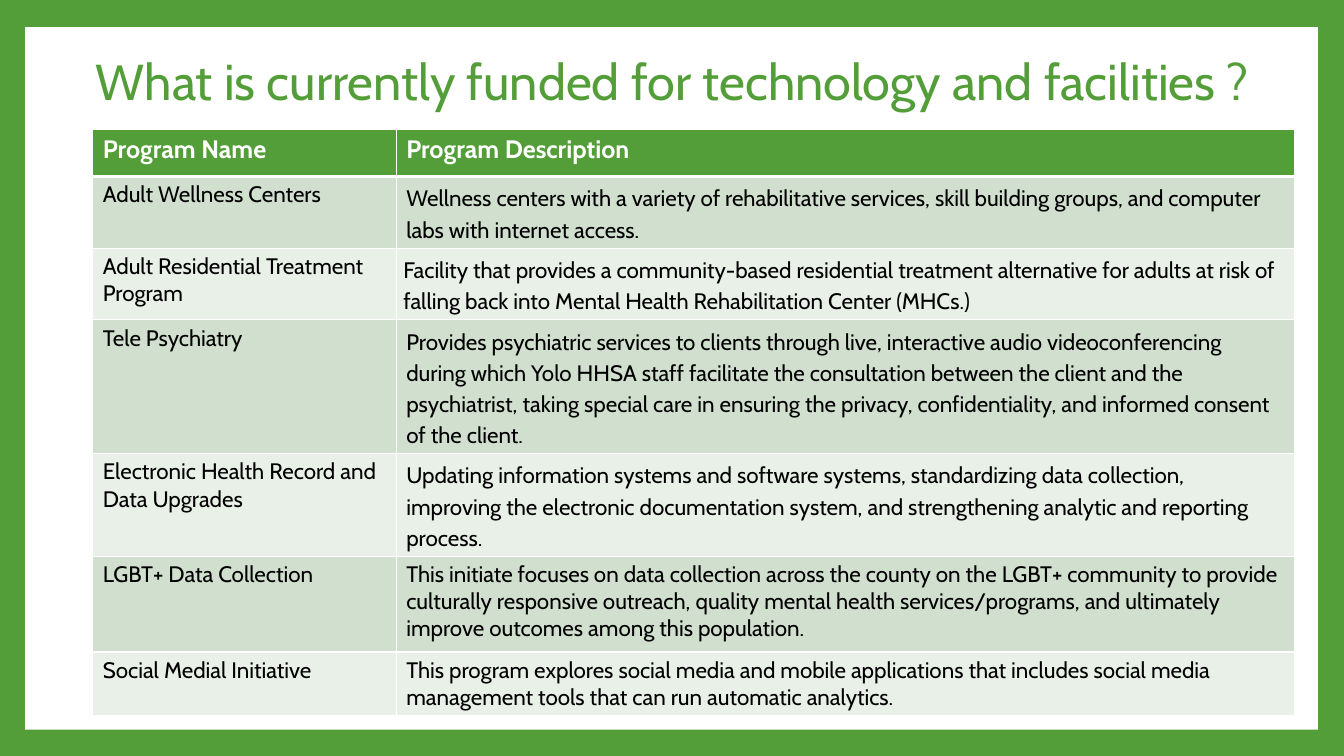
import pptx
import pptx.util
import pptx.dml.color
import pptx.enum.shapes
import pptx.enum.text
import pptx.oxml
import pptx.oxml.ns

PX = 9144
FONT = "Cabin"
COLORS = {
    "green": "549E39",
    "white": "FFFFFF",
    "black": "000000",
    "dark_band": "D1DFCE",
    "light_band": "E9F0E8",
}
COLUMN_WIDTHS = [301, 891]
ROW_HEIGHTS = [47, 70, 71, 130, 79, 95, 53]
HEADINGS = ("Program Name", "Program Description")
SPACED_ROWS = range(1, 5)
CENTERED_ROW = 2
PROGRAMS = [
    ("Adult Wellness Centers",
     "Wellness centers with a variety of rehabilitative services, skill building groups, "
     "and computer labs with internet access."),
    ("Adult Residential Treatment Program",
     "Facility that provides a community-based residential treatment alternative for adults "
     "at risk of falling back into Mental Health Rehabilitation Center (MHCs.)"),
    ("Tele Psychiatry",
     "Provides psychiatric services to clients through live, interactive audio "
     "videoconferencing during which Yolo HHSA staff facilitate the consultation between "
     "the client and the psychiatrist, taking special care in ensuring the privacy, "
     "confidentiality, and informed consent of the client."),
    ("Electronic Health Record and Data Upgrades",
     "Updating information systems and software systems, standardizing data collection, "
     "improving the electronic documentation system, and strengthening analytic and "
     "reporting process."),
    ("LGBT+ Data Collection",
     "This initiate focuses on data collection across the county on the LGBT+ community to "
     "provide culturally responsive outreach, quality mental health services/programs, and "
     "ultimately improve outcomes among this population."),
    ("Social Medial Initiative",
     "This program explores social media and mobile applications that includes social media "
     "management tools that can run automatic analytics."),
]


def px(*lengths):
    return [pptx.util.Emu(length * PX) for length in lengths]


def paint(fill, color):
    fill.solid()
    fill.fore_color.rgb = pptx.dml.color.RGBColor.from_string(COLORS[color])


def write(text_frame, text, size, color, bold=False):
    text_frame.text = text
    para = text_frame.paragraphs[0]
    for span in para.runs:
        span.font.name = FONT
        span.font.size = pptx.util.Pt(size)
        span.font.bold = bold
        span.font.color.rgb = pptx.dml.color.RGBColor.from_string(COLORS[color])
    return para


def add_panel(page):
    panel = page.shapes.add_shape(
        pptx.enum.shapes.MSO_SHAPE.RECTANGLE, *px(25, 27, 1282, 697))
    panel.shadow.inherit = False
    paint(panel.fill, "white")
    panel.line.fill.background()


def add_title(page, text):
    box = page.shapes.add_textbox(*px(71, 40, 1192, 88))
    box.text_frame.word_wrap = True
    box.text_frame.vertical_anchor = pptx.enum.text.MSO_ANCHOR.MIDDLE
    para = write(box.text_frame, text, 36, "green")
    para.alignment = pptx.enum.text.PP_ALIGN.CENTER
    para.line_spacing = 0.9


def add_borders(cell, row):
    widths = {"L": 1, "R": 1, "T": 3 if row == 1 else 1, "B": 3 if row == 0 else 1}
    properties = cell._tc.get_or_add_tcPr()
    for side, width in widths.items():
        properties.append(pptx.oxml.parse_xml(
            f'<a:ln{side} {pptx.oxml.ns.nsdecls("a")} w="{pptx.util.Pt(width)}">'
            f'<a:solidFill><a:srgbClr val="{COLORS["white"]}"/></a:solidFill>'
            f'</a:ln{side}>'))


def fill_cell(cell, row, column, text):
    add_borders(cell, row)
    if row == 0:
        paint(cell.fill, "green")
        write(cell.text_frame, text, 18, "white", bold=True)
        return
    paint(cell.fill, "dark_band" if row % 2 else "light_band")
    para = write(cell.text_frame, text, 16, "black")
    if column == 1 and row in SPACED_ROWS:
        para.line_spacing = 1.15
        para.space_before = para.space_after = pptx.util.Pt(4)
    if column == 1 and row == CENTERED_ROW:
        cell.vertical_anchor = pptx.enum.text.MSO_ANCHOR.MIDDLE
        cell.margin_left, cell.margin_right, cell.margin_top, cell.margin_bottom = px(7, 7, 0, 0)


def add_program_table(page):
    rows = [HEADINGS, *PROGRAMS]
    table = page.shapes.add_table(
        len(rows), len(HEADINGS),
        *px(92, 128, sum(COLUMN_WIDTHS), sum(ROW_HEIGHTS))).table
    table.horz_banding = False
    for column, width in zip(table.columns, px(*COLUMN_WIDTHS)):
        column.width = width
    for row, height in zip(table.rows, px(*ROW_HEIGHTS)):
        row.height = height
    for row, texts in enumerate(rows):
        for column, text in enumerate(texts):
            fill_cell(table.cell(row, column), row, column, text)


def main():
    deck = pptx.Presentation()
    deck.slide_width, deck.slide_height = px(1333, 750)
    page = deck.slides.add_slide(deck.slide_layouts[6])
    paint(page.background.fill, "green")
    add_panel(page)
    add_title(page, "What is currently funded for technology and facilities ?")
    add_program_table(page)
    deck.save("out.pptx")


if __name__ == "__main__":
    main()
